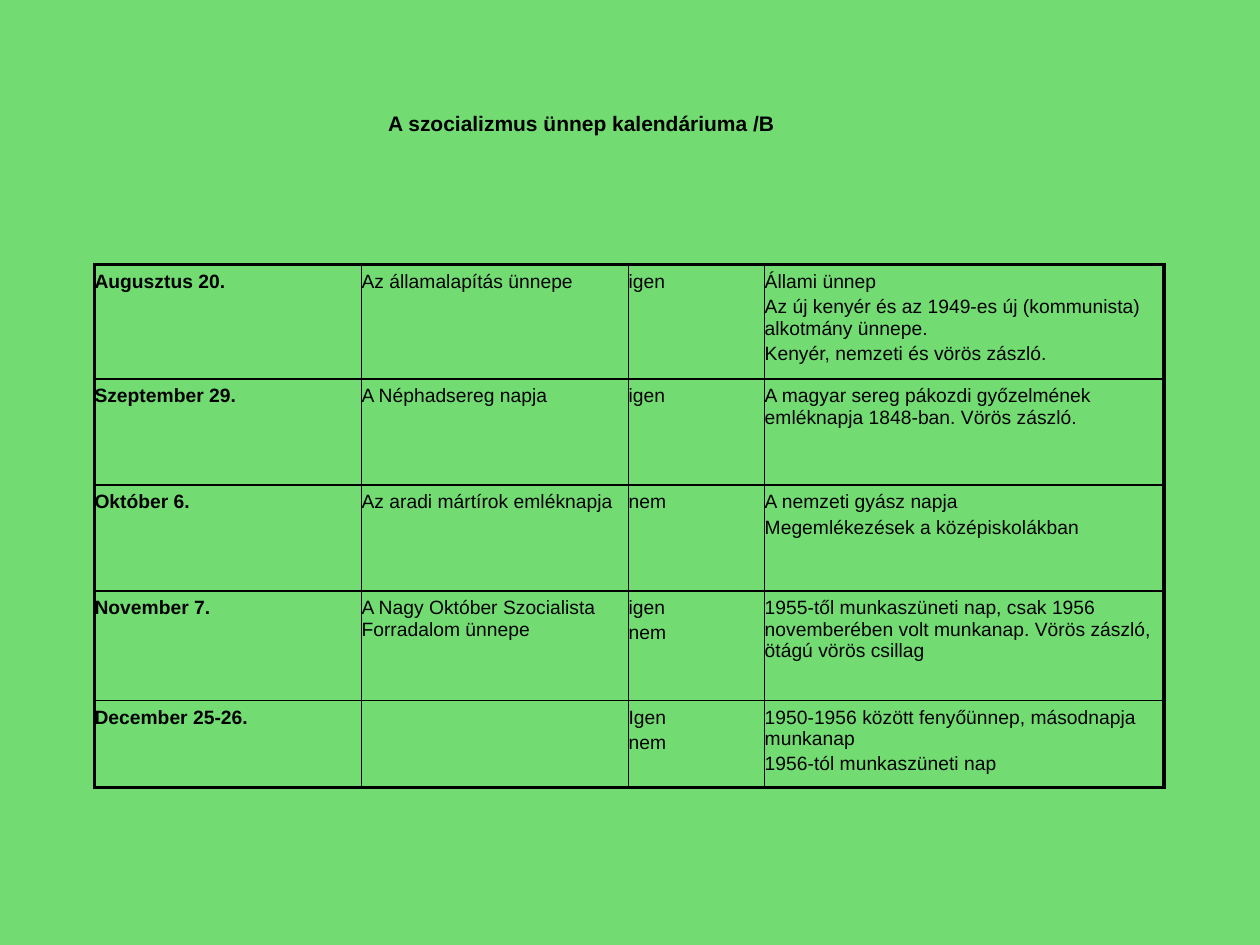
from pptx import Presentation
from pptx.dml.color import RGBColor
from pptx.enum import text
from pptx.oxml import parse_xml
from pptx.oxml.ns import nsdecls
from pptx.util import Inches, Pt

GREEN = RGBColor(0x72, 0xDC, 0x72)
BLACK = RGBColor(0, 0, 0)
FONT = "Arial"
THIN, THICK = Pt(1), Pt(2.25)

TITLE = "A szocializmus ünnep kalendáriuma /B"

# Each row: date, holiday, day off, remarks; each cell is a list of paragraphs
HOLIDAYS = [
    (["Augusztus 20."], ["Az államalapítás ünnepe"], ["igen"],
     ["Állami ünnep",
      "Az új kenyér és az 1949-es új (kommunista) alkotmány ünnepe.",
      "Kenyér, nemzeti és vörös zászló."]),
    (["Szeptember 29."], ["A Néphadsereg napja"], ["igen"],
     ["A magyar sereg pákozdi győzelmének emléknapja 1848-ban. Vörös zászló."]),
    (["Október 6."], ["Az aradi mártírok emléknapja"], ["nem"],
     ["A nemzeti gyász napja", "Megemlékezések a középiskolákban"]),
    (["November 7."], ["A Nagy Október Szocialista Forradalom ünnepe"],
     ["igen", "nem"],
     ["1955-től munkaszüneti nap, csak 1956 novemberében volt munkanap. "
      "Vörös zászló, ötágú vörös csillag"]),
    (["December 25-26."], [], ["Igen", "nem"],
     ["1950-1956 között fenyőünnep, másodnapja munkanap",
      "1956-tól munkaszüneti nap"]),
]
COLUMN_WIDTHS = [2.12, 2.12, 1.08, 3.17]
ROW_HEIGHTS = [0.91, 0.84, 0.84, 0.87, 0.69]


def add_span(para, words, size, bold):
    span = para.add_run()
    span.text = words
    span.font.name = FONT
    span.font.size = Pt(size)
    span.font.bold = bold
    span.font.color.rgb = BLACK


def set_borders(cell, widths):
    """Draw the left, right, top and bottom edges, ahead of the cell's fill."""
    properties = cell._tc.get_or_add_tcPr()
    for place, (side, width) in enumerate(zip("LRTB", widths)):
        properties.insert(place, parse_xml(
            f'<a:ln{side} {nsdecls("a")} w="{width}"><a:solidFill>'
            f'<a:srgbClr val="{BLACK}"/></a:solidFill></a:ln{side}>'))


def fill_cell(cell, paragraphs, bold):
    cell.fill.background()
    cell.margin_left = cell.margin_right = 0
    cell.margin_top = cell.margin_bottom = Inches(0.05)
    for number, words in enumerate(paragraphs):
        frame = cell.text_frame
        para = frame.add_paragraph() if number else frame.paragraphs[0]
        if number:
            para.space_before = Pt(2.2)
        add_span(para, words, 11, bold)


deck = Presentation()
deck.slide_width, deck.slide_height = Inches(10), Inches(7.5)
page = deck.slides.add_slide(deck.slide_layouts[5])
page.background.fill.solid()
page.background.fill.fore_color.rgb = GREEN

# Title
title = page.shapes.title
title.left, title.top = Inches(0.9), Inches(0.83)
title.width, title.height = Inches(7.43), Inches(0.6)
title.text_frame.vertical_anchor = text.MSO_ANCHOR.TOP
title.text_frame.auto_size = text.MSO_AUTO_SIZE.NONE
heading = title.text_frame.paragraphs[0]
heading.alignment = text.PP_ALIGN.CENTER
add_span(heading, TITLE, 12, True)

# Holiday table, with a thick outer frame
last_row, last_column = len(ROW_HEIGHTS) - 1, len(COLUMN_WIDTHS) - 1
table = page.shapes.add_table(
    len(ROW_HEIGHTS), len(COLUMN_WIDTHS), Inches(0.75), Inches(2.1),
    Inches(sum(COLUMN_WIDTHS)), Inches(sum(ROW_HEIGHTS))).table
table.first_row = table.horz_banding = False
for column, width in zip(table.columns, COLUMN_WIDTHS):
    column.width = Inches(width)
for row, height in zip(table.rows, ROW_HEIGHTS):
    row.height = Inches(height)
for r, holiday in enumerate(HOLIDAYS):
    for c, paragraphs in enumerate(holiday):
        cell = table.cell(r, c)
        fill_cell(cell, paragraphs, bold=c == 0)
        outer = (c == 0, c == last_column, r == 0, r == last_row)
        set_borders(cell, [THICK if edge else THIN for edge in outer])

deck.save("out.pptx")
